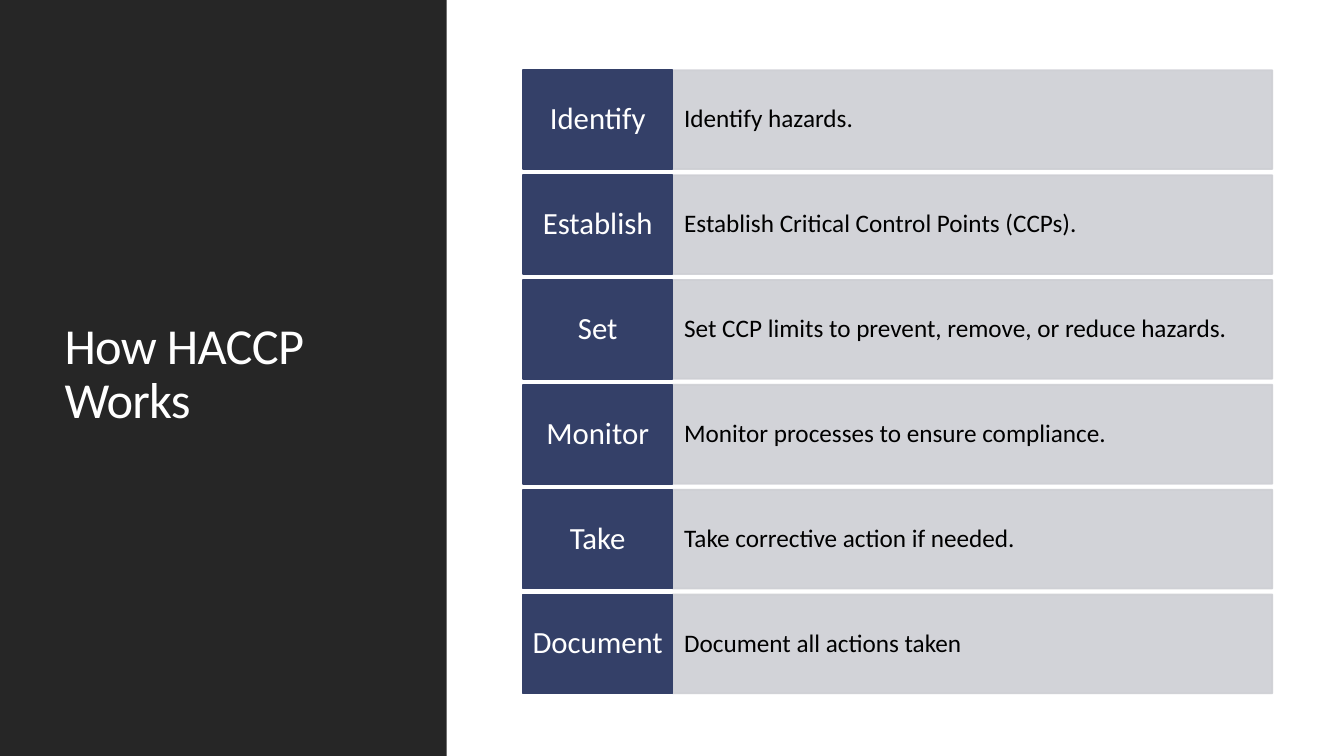
from lxml import etree
from pptx import Presentation
from pptx.dml.color import RGBColor
from pptx.enum import shapes, text
from pptx.oxml import ns
from pptx.util import Pt

DARK = RGBColor(0x26, 0x26, 0x26)
NAVY = RGBColor(0x34, 0x40, 0x68)
GREY = RGBColor(0xCE, 0xCF, 0xD4)
WHITE = RGBColor(0xFF, 0xFF, 0xFF)
BLACK = RGBColor(0, 0, 0)

STEPS = [
    ("Identify", "Identify hazards."),
    ("Establish", "Establish Critical Control Points (CCPs)."),
    ("Set", "Set CCP limits to prevent, remove, or reduce hazards."),
    ("Monitor", "Monitor processes to ensure compliance."),
    ("Take", "Take corrective action if needed."),
    ("Document", "Document all actions taken"),
]
TOP, PITCH, HEIGHT = 50.2, 74.9, 70.6

deck = Presentation()
deck.slide_width, deck.slide_height = Pt(960), Pt(540)
slide = deck.slides.add_slide(deck.slide_layouts[5])


def add_box(left, top, width, height, fill):
    box = slide.shapes.add_shape(shapes.MSO_SHAPE.RECTANGLE,
                                 Pt(left), Pt(top), Pt(width), Pt(height))
    box.shadow.inherit = False
    box.fill.solid()
    box.fill.fore_color.rgb = fill
    box.line.fill.background()
    return box


def set_text(shape, words, size, color, align):
    frame = shape.text_frame
    frame.text = words
    frame.word_wrap = True
    frame.vertical_anchor = text.MSO_ANCHOR.MIDDLE
    para = frame.paragraphs[0]
    para.alignment = align
    para.line_spacing = 0.9
    font = para.runs[0].font
    font.name, font.size, font.color.rgb = "Calibri", Pt(size), color


# Dark side panel, placed behind the title
title = slide.shapes.title
panel = add_box(0, 0, 319, 540, DARK)
title.element.addprevious(panel.element)

# Title
title.left, title.top = Pt(38.9), Pt(41)
title.width, title.height = Pt(242.6), Pt(454.3)
set_text(title, "How HACCP Works", 36, WHITE, text.PP_ALIGN.LEFT)
run = title.text_frame.paragraphs[0].runs[0]
run.font._element.set("spc", "-50")

# Step rows: grey detail, then navy label
for row, (name, detail) in enumerate(STEPS):
    top = TOP + row * PITCH
    for left, width, fill, words, size, color, align, side, edge in (
        (480.4, 428.4, GREY, detail, 18, BLACK, text.PP_ALIGN.LEFT, 8.3, 18),
        (373.4, 107.1, NAVY, name, 22, WHITE, text.PP_ALIGN.CENTER, 5.7, 7),
    ):
        box = add_box(left, top, width, HEIGHT, fill)
        box.line.color.rgb = fill
        box.line.width = Pt(1.25)
        set_text(box, words, size, color, align)
        frame = box.text_frame
        frame.margin_left = frame.margin_right = Pt(side)
        frame.margin_top = frame.margin_bottom = Pt(edge)
        if fill == GREY:
            # Fill and line at 90 % opacity
            for tint in box.element.xpath("p:spPr//a:srgbClr"):
                etree.SubElement(tint, ns.qn("a:alpha")).set("val", "90000")

deck.save("out.pptx")
